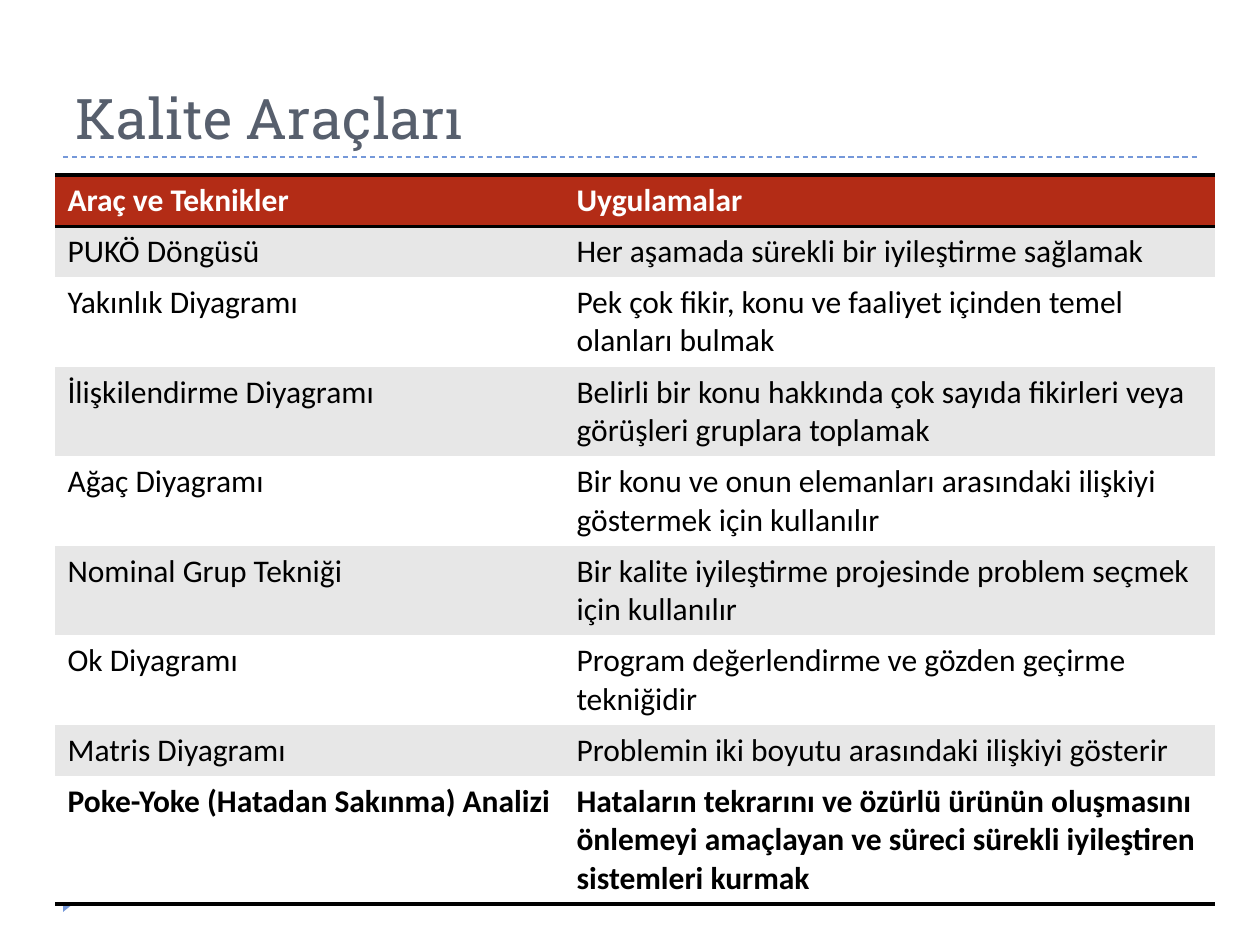
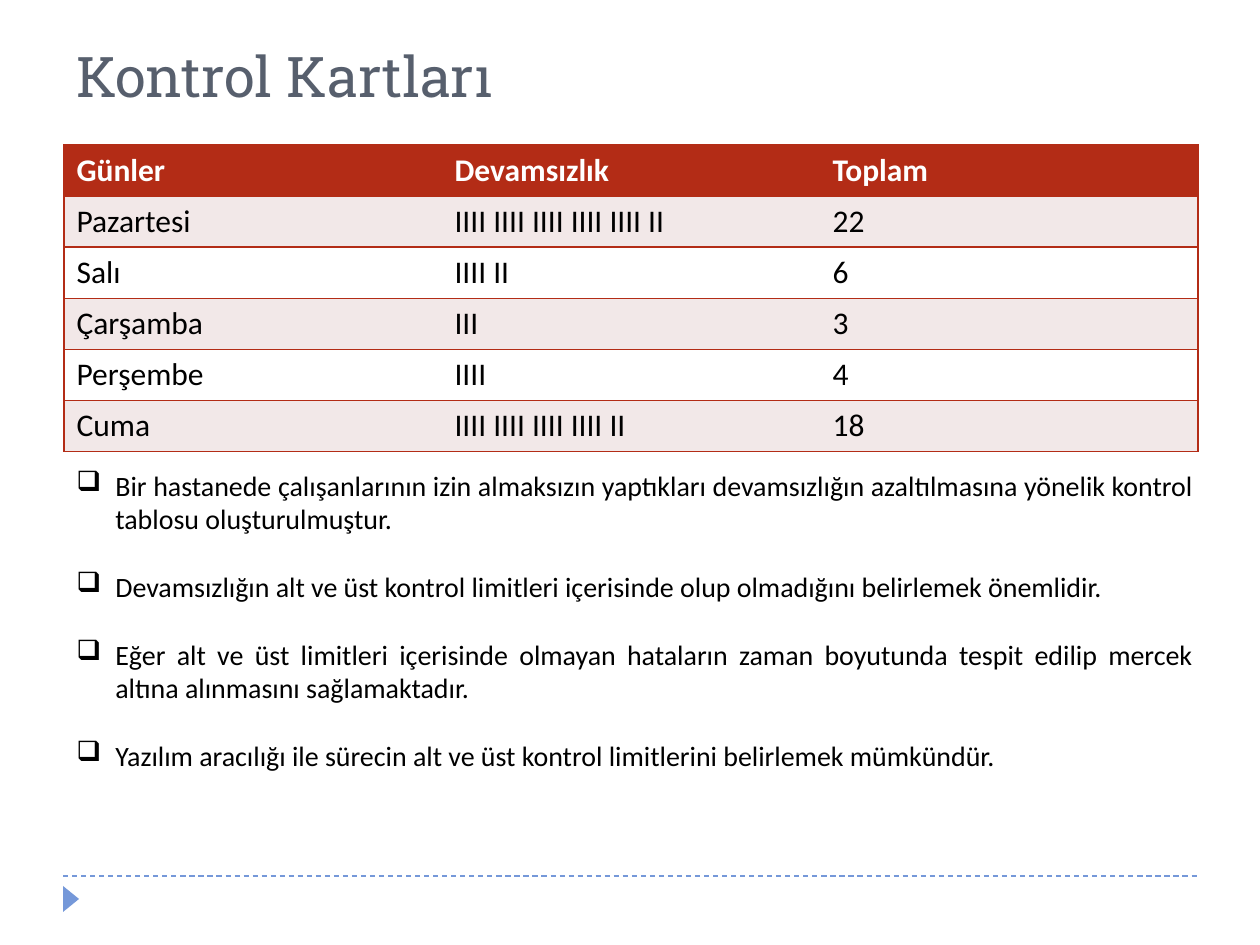
from lxml import etree
from pptx import Presentation, util as u
from pptx.dml.color import RGBColor
from pptx.enum import dml, shapes, text
from pptx.oxml.ns import qn

BLUE, SLATE, RED = "7598D9", "575F6D", "B32C16"
BLACK, WHITE, GREY, PINK = "000000", "FFFFFF", "E7E7E7", "F2E8E8"
BODY, HEAD = "Calibri", "Roboto Slab"
PLAIN = "{2D5ABB26-0587-4C30-8999-92F81FD0307C}"  # table style without grid


def px(n):
    return u.Emu(round(n * 914400 / 126))


def rgb(code):
    return RGBColor.from_string(code)


prs = Presentation()
prs.slide_width, prs.slide_height = px(1260), px(945)

# Content: title and its box, table place, columns, row heights, band colour,
# rule colour and width in points, cells
pages = [
    dict(
        title="Kalite Araçları", box=(63, 21, 1134, 136),
        at=(55, 175), cols=[509, 651],
        rows=[51, 51, 89, 89, 89, 89, 89, 51, 127],
        band=GREY, rule=BLACK, width=2, grid=False, bold=[0, 8],
        cells=[
            ("Araç ve Teknikler", "Uygulamalar"),
            ("PUKÖ Döngüsü", "Her aşamada sürekli bir iyileştirme sağlamak"),
            ("Yakınlık Diyagramı",
             "Pek çok fikir, konu ve faaliyet içinden temel olanları bulmak"),
            ("İlişkilendirme Diyagramı",
             "Belirli bir konu hakkında çok sayıda fikirleri veya görüşleri "
             "gruplara toplamak"),
            ("Ağaç Diyagramı",
             "Bir konu ve onun elemanları arasındaki ilişkiyi göstermek için "
             "kullanılır"),
            ("Nominal Grup Tekniği",
             "Bir kalite iyileştirme projesinde problem seçmek için kullanılır"),
            ("Ok Diyagramı",
             "Program değerlendirme ve gözden geçirme tekniğidir"),
            ("Matris Diyagramı",
             "Problemin iki boyutu arasındaki ilişkiyi gösterir"),
            ("Poke-Yoke (Hatadan Sakınma) Analizi",
             "Hataların tekrarını ve özürlü ürünün oluşmasını önlemeyi "
             "amaçlayan ve süreci sürekli iyileştiren sistemleri kurmak"),
        ],
        notes=[],
    ),
    dict(
        title="Kontrol Kartları", box=(64, -43, 1134, 158),
        at=(64, 145), cols=[378] * 3, rows=[51] * 6,
        band=PINK, rule=RED, width=1, grid=True, bold=[0],
        cells=[
            ("Günler", "Devamsızlık", "Toplam"),
            ("Pazartesi", "IIII IIII IIII IIII IIII II", "22"),
            ("Salı", "IIII II", "6"),
            ("Çarşamba", "III", "3"),
            ("Perşembe", "IIII", "4"),
            ("Cuma", "IIII IIII IIII IIII II", "18"),
        ],
        notes=[
            "Bir hastanede çalışanlarının izin almaksızın yaptıkları "
            "devamsızlığın azaltılmasına yönelik kontrol tablosu "
            "oluşturulmuştur.",
            "Devamsızlığın alt ve üst kontrol limitleri içerisinde olup "
            "olmadığını belirlemek önemlidir.",
            "Eğer alt ve üst limitleri içerisinde olmayan hataların zaman "
            "boyutunda tespit edilip mercek altına alınmasını sağlamaktadır.",
            "Yazılım aracılığı ile sürecin alt ve üst kontrol limitlerini "
            "belirlemek mümkündür.",
        ],
    ),
]

for page in pages:
    slide = prs.slides.add_slide(prs.slide_layouts[5])

    # Dashed rules and corner triangle
    for y in (876, 157):
        line = slide.shapes.add_connector(
            shapes.MSO_CONNECTOR.STRAIGHT, px(63), px(y), px(1197), px(y))
        line.line.color.rgb = rgb(BLUE)
        line.line.width = u.Pt(0.75)
        line.line.dash_style = dml.MSO_LINE.DASH
        etree.SubElement(line._element.spPr, qn("a:effectLst"))
    mark = slide.shapes.add_shape(
        shapes.MSO_SHAPE.ISOSCELES_TRIANGLE, px(58), px(891), px(26), px(16))
    mark.rotation = 90
    mark.shadow.inherit = False
    mark.fill.solid()
    mark.fill.fore_color.rgb = rgb(BLUE)
    mark.line.fill.background()

    # Title
    title = slide.shapes.title
    title.left, title.top, title.width, title.height = map(px, page["box"])
    frame = title.text_frame
    frame.text = page["title"]
    frame.auto_size = text.MSO_AUTO_SIZE.NONE
    frame.vertical_anchor = text.MSO_ANCHOR.BOTTOM
    para = frame.paragraphs[0]
    para.alignment = text.PP_ALIGN.LEFT
    font = para.runs[0].font
    font.name, font.size = HEAD, u.Pt(32)
    font.color.rgb = rgb(SLATE)

    # Table
    cols, rows = page["cols"], page["rows"]
    left, top = page["at"]
    table = slide.shapes.add_table(
        len(rows), len(cols), px(left), px(top),
        px(sum(cols)), px(sum(rows))).table
    table._tbl.tblPr.find(qn("a:tableStyleId")).text = PLAIN
    table.horz_banding = False
    for col, wide in zip(table.columns, cols):
        col.width = px(wide)
    for row, high in zip(table.rows, rows):
        row.height = px(high)
    for r, words in enumerate(page["cells"]):
        for c, word in enumerate(words):
            cell = table.cell(r, c)
            cell.text = word
            font = cell.text_frame.paragraphs[0].runs[0].font
            font.name, font.size = BODY, u.Pt(18)
            font.bold = r in page["bold"]
            font.color.rgb = rgb(BLACK if r else WHITE)

            # Cell borders go before the fill, in the order L, R, T, B
            last = r == len(rows) - 1
            edges = {
                "L": page["grid"] and c == 0,
                "R": page["grid"] and c == len(cols) - 1,
                "T": page["grid"] or r == 0,
                "B": page["grid"] or r == 0 or last,
            }
            props = cell._tc.get_or_add_tcPr()
            for side, shown in edges.items():
                if shown:
                    edge = etree.SubElement(
                        props, qn("a:ln" + side), w=str(u.Pt(page["width"])))
                    fill = etree.SubElement(edge, qn("a:solidFill"))
                    etree.SubElement(fill, qn("a:srgbClr"), val=page["rule"])
            cell.fill.solid()
            band = page["band"] if r % 2 else WHITE
            cell.fill.fore_color.rgb = rgb(band if r else RED)

    # Bulleted notes
    if page["notes"]:
        box = slide.shapes.add_textbox(px(64), px(462), px(1142), px(318))
        frame = box.text_frame
        frame.word_wrap = True
        frame.text = "\n".join(page["notes"])
        for para in frame.paragraphs:
            para.alignment = text.PP_ALIGN.JUSTIFY
            para.space_after = u.Pt(19.5)
            props = para._p.get_or_add_pPr()
            props.set("marL", str(px(39)))
            props.set("indent", str(px(-39)))
            etree.SubElement(props, qn("a:buChar"), char="❑")
            font = para.runs[0].font
            font.name, font.size = BODY, u.Pt(16)
            font.color.rgb = rgb(BLACK)

prs.save("out.pptx")
